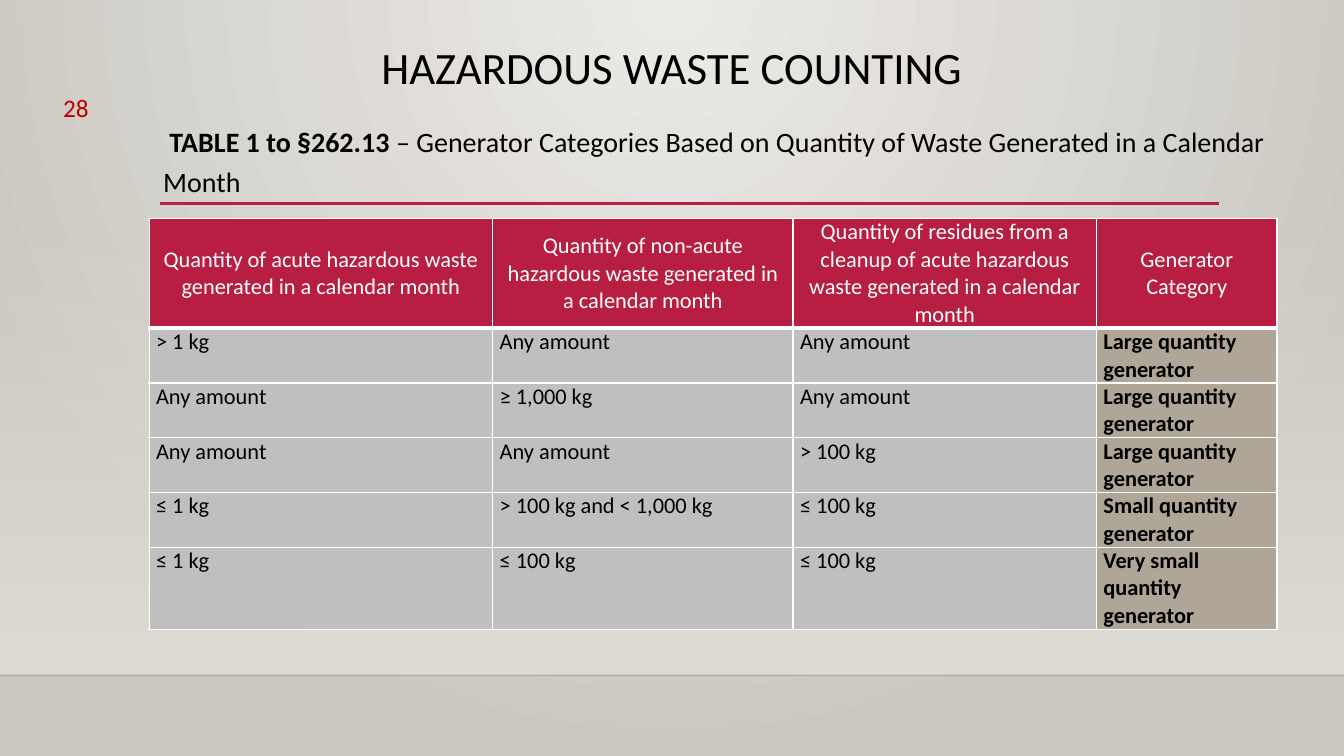
import pptx
import pptx.util
import pptx.dml.color
import pptx.enum.shapes
import pptx.enum.text
import pptx.oxml
import pptx.oxml.ns

Pt = pptx.util.Pt
ALIGN = pptx.enum.text.PP_ALIGN
ANCHOR = pptx.enum.text.MSO_ANCHOR

TITLE = "HAZARDOUS WASTE COUNTING"
CAPTION = [
    ("TABLE 1 to §262.13", True),
    (" – Generator Categories Based on Quantity of Waste Generated in a Calendar Month", False),
]
PAGE = "28"
HEADER = [
    "Quantity of acute hazardous waste generated in a calendar month",
    "Quantity of non-acute hazardous waste generated in a calendar month",
    "Quantity of residues from a cleanup of acute hazardous waste generated in a calendar month",
    "Generator Category",
]
ROWS = [
    ("> 1 kg", "Any amount", "Any amount", "Large quantity generator"),
    ("Any amount", "≥ 1,000 kg", "Any amount", "Large quantity generator"),
    ("Any amount", "Any amount", "> 100 kg", "Large quantity generator"),
    ("≤ 1 kg", "> 100 kg and < 1,000 kg", "≤ 100 kg", "Small quantity generator"),
    ("≤ 1 kg", "≤ 100 kg", "≤ 100 kg", "Very small quantity generator"),
]
COLUMN_WIDTHS = [245.5, 214.5, 216.75, 129]
ROW_HEIGHTS = [78.5] + [39.1] * 4 + [58.6]

THEME = {
    "font": "Calibri",
    "title": 32, "caption": 20, "page": 18, "table": 16,
    "text": "000000", "white": "FFFFFF", "accent": "B71E42", "number": "C00000",
    "cell": "BFBFBF", "category": "B0A697", "floor": "000001",
    "wall": "DFDBD5", "glow": "ECEAE7", "edge": "CAC7C1",
}
W, H = 960, 540
FLOOR_Y = 482.4
NS = pptx.oxml.ns.nsdecls("a", "p")


def rgb(name):
    return pptx.dml.color.RGBColor.from_string(THEME[name])


def style(r, size, color, bold=False):
    r.font.name = THEME["font"]
    r.font.size = Pt(THEME[size])
    r.font.color.rgb = rgb(color)
    r.font.bold = bold


def gradient(stops, direction):
    gs = "".join(
        f'<a:gs pos="{pos * 1000}"><a:srgbClr val="{THEME[color]}">'
        f'<a:alpha val="{alpha * 1000}"/></a:srgbClr></a:gs>'
        for pos, color, alpha in stops)
    return f'<a:gradFill {NS} rotWithShape="1"><a:gsLst>{gs}</a:gsLst>{direction}</a:gradFill>'


def add_text(s, box, runs, size, color, align=ALIGN.LEFT):
    tf = s.shapes.add_textbox(*map(Pt, box)).text_frame
    tf.word_wrap = True
    p = tf.paragraphs[0]
    p.alignment = align
    for text, bold in runs:
        r = p.add_run()
        r.text = text
        style(r, size, color, bold)
    return tf


def add_line(s, x1, x2, y, color, width, alpha=100):
    c = s.shapes.add_connector(
        pptx.enum.shapes.MSO_CONNECTOR.STRAIGHT, Pt(x1), Pt(y), Pt(x2), Pt(y))
    c.line.width = Pt(width)
    c.line.color.rgb = rgb(color)
    clr = c.line._ln.find(".//" + pptx.oxml.ns.qn("a:srgbClr"))
    clr.append(pptx.oxml.parse_xml(f'<a:alpha {NS} val="{alpha * 1000}"/>'))
    c._element.spPr.append(pptx.oxml.parse_xml(f"<a:effectLst {NS}/>"))


def add_backdrop(s):
    s.background.fill.solid()
    bg_pr = s.background._cSld.bg.bgPr
    glow = gradient(
        [(0, "glow", 100), (100, "edge", 100)],
        '<a:path path="circle"><a:fillToRect l="43000" t="0" r="43000" b="100000"/></a:path>')
    bg_pr.replace(bg_pr[0], pptx.oxml.parse_xml(glow))

    sp = s.shapes.add_shape(
        pptx.enum.shapes.MSO_SHAPE.RECTANGLE, 0, Pt(159), Pt(W), Pt(FLOOR_Y - 159))
    sp.shadow.inherit = False
    sp.line.fill.background()
    sp.fill.solid()
    fade = gradient([(0, "wall", 0), (100, "wall", 100)], '<a:lin ang="5400000" scaled="0"/>')
    solid = sp._element.spPr.find(pptx.oxml.ns.qn("a:solidFill"))
    sp._element.spPr.replace(solid, pptx.oxml.parse_xml(fade))
    add_line(s, 0, W, FLOOR_Y, "floor", 1, 20)


def set_borders(cell, bottom):
    tc_pr = cell._tc.get_or_add_tcPr()
    for i, (side, width) in enumerate([("L", 1), ("R", 1), ("T", 1), ("B", bottom)]):
        tc_pr.insert(i, pptx.oxml.parse_xml(
            f'<a:ln{side} {NS} w="{Pt(width)}"><a:solidFill>'
            f'<a:srgbClr val="{THEME["white"]}"/></a:solidFill></a:ln{side}>'))


def add_category_table(s):
    data = [HEADER] + ROWS
    table = s.shapes.add_table(
        len(data), len(HEADER), Pt(106.5), Pt(156),
        Pt(sum(COLUMN_WIDTHS)), Pt(sum(ROW_HEIGHTS))).table
    table.horz_banding = False
    for column, width in zip(table.columns, COLUMN_WIDTHS):
        column.width = Pt(width)
    for i, (row, height) in enumerate(zip(table.rows, ROW_HEIGHTS)):
        row.height = Pt(height)
        head = i == 0
        for j, cell in enumerate(row.cells):
            category = not head and j == len(HEADER) - 1
            cell.text_frame.text = data[i][j]
            cell.margin_left = cell.margin_right = Pt(5)
            cell.margin_top = cell.margin_bottom = 0
            cell.vertical_anchor = ANCHOR.MIDDLE if head else ANCHOR.TOP
            cell.fill.solid()
            cell.fill.fore_color.rgb = rgb("accent" if head else "category" if category else "cell")
            p = cell.text_frame.paragraphs[0]
            p.alignment = ALIGN.CENTER if head else ALIGN.LEFT
            style(p.runs[0], "table", "white" if head else "text", category)
            set_borders(cell, 3 if head else 1)


def main():
    prs = pptx.Presentation()
    prs.slide_width, prs.slide_height = Pt(W), Pt(H)
    s = prs.slides.add_slide(prs.slide_layouts[6])
    add_backdrop(s)
    add_line(s, 114.5, 871, 145.4, "accent", 2.5)

    tf = add_text(s, (48, 28.8, 864, 84), [(TITLE, False)], "title", "text", ALIGN.CENTER)
    tf.paragraphs[0].line_spacing = 0.9

    tf = add_text(s, (88.5, 80.6, 834, 65.5), CAPTION, "caption", "text")
    tf.margin_left = Pt(21.6)
    p = tf.paragraphs[0]
    p.line_spacing = 1.2
    p_pr = p._p.get_or_add_pPr()
    p_pr.set("marL", str(Pt(6.5)))
    p_pr.set("indent", str(Pt(4.5)))

    add_text(s, (38, 62.6, 64, 39.6), [(PAGE, False)], "page", "number")
    add_category_table(s)
    prs.save("out.pptx")


if __name__ == "__main__":
    main()
